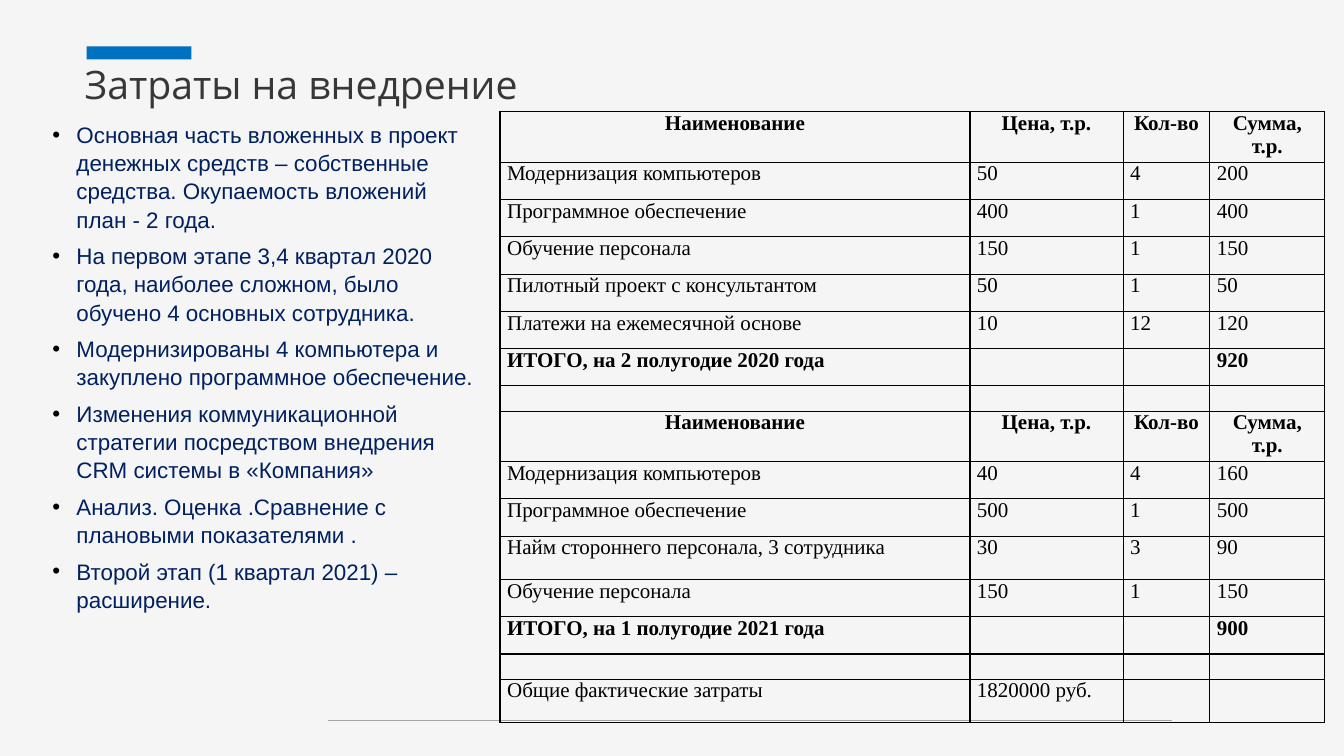
import pptx
import pptx.dml.color
import pptx.enum.shapes
import pptx.enum.text
import pptx.oxml
import pptx.oxml.ns
import pptx.util
from pptx.util import Inches

ALIGN = pptx.enum.text.PP_ALIGN
ANCHOR = pptx.enum.text.MSO_ANCHOR

TITLE_FONT = {"name": "Open Sans", "size": 28, "color": "373737"}
BULLET_FONT = {"name": "Arial", "size": 16, "color": "002060"}
TABLE_FONT = {"name": "Times New Roman", "size": 15, "color": "000000"}

BULLETS = [
    "Основная часть вложенных в проект денежных средств – собственные средства. "
    "Окупаемость вложений план - 2 года.",
    "На первом этапе 3,4 квартал 2020 года, наиболее сложном, было обучено "
    "4 основных сотрудника.",
    "Модернизированы 4 компьютера и закуплено программное обеспечение.",
    "Изменения коммуникационной стратегии посредством внедрения CRM системы в «Компания»",
    "Анализ. Оценка .Сравнение с плановыми показателями .",
    "Второй этап (1 квартал 2021) – расширение.",
]

HEADER = ("Наименование", "Цена, т.р.", "Кол-во", "Сумма, т.р.")
SPACER = ("", "", "", "")
COSTS = [
    HEADER,
    ("Модернизация компьютеров", "50", "4", "200"),
    ("Программное обеспечение", "400", "1", "400"),
    ("Обучение персонала", "150", "1", "150"),
    ("Пилотный проект с консультантом", "50", "1", "50"),
    ("Платежи на ежемесячной основе", "10", "12", "120"),
    ("ИТОГО, на 2 полугодие 2020 года", "", "", "920"),
    SPACER,
    HEADER,
    ("Модернизация компьютеров", "40", "4", "160"),
    ("Программное обеспечение", "500", "1", "500"),
    ("Найм стороннего персонала, 3 сотрудника", "30", "3", "90"),
    ("Обучение персонала", "150", "1", "150"),
    ("ИТОГО, на 1 полугодие 2021 года", "", "", "900"),
    SPACER,
    ("Общие фактические затраты", "1820000 руб.", "", ""),
]
COLUMN_WIDTHS = (4.66, 1.52, 0.86, 1.14)
ROW_HEIGHT, SPACER_HEIGHT, TALL_HEIGHT = 0.37, 0.25, 0.43
TALL_ROWS = {HEADER, COSTS[11], COSTS[-1]}


def rgb(value):
    return pptx.dml.color.RGBColor.from_string(value)


def element(xml):
    """Parse one DrawingML element written with the a: prefix."""
    tag, rest = xml[:-2].partition(" ")[::2] if xml.endswith("/>") and xml.count("<") == 1 else (None, None)
    if tag:
        return pptx.oxml.parse_xml(f"{tag} {pptx.oxml.ns.nsdecls('a')} {rest}/>")
    start, end = xml.split(">", 1)
    return pptx.oxml.parse_xml(f"{start} {pptx.oxml.ns.nsdecls('a')}>{end}")


def set_font(font, formats):
    for name, value in formats.items():
        if name == "color":
            font.color.rgb = rgb(value)
        else:
            setattr(font, name, pptx.util.Pt(value) if name == "size" else value)


def write(para, text, formats):
    span = para.add_run()
    span.text = text
    set_font(span.font, formats)


def add_accent_bar(page):
    bar = page.shapes.add_shape(
        pptx.enum.shapes.MSO_SHAPE.RECTANGLE,
        Inches(0.86), Inches(0.46), Inches(1.04), Inches(0.13))
    bar.shadow.inherit = False
    bar.fill.solid()
    bar.fill.fore_color.rgb = rgb("0070C0")
    bar.line.fill.background()


def add_footer_line(page):
    line = page.shapes.add_connector(
        pptx.enum.shapes.MSO_CONNECTOR.STRAIGHT,
        Inches(3.25), Inches(7.15), Inches(11.62), Inches(7.15))
    line.line.color.rgb = rgb("A5A5A7")
    line.line.width = pptx.util.Pt(0.75)
    line._element.spPr.append(element("<a:effectLst/>"))


def add_text_frame(page, left, top, width, height, anchor):
    box = page.shapes.add_textbox(Inches(left), Inches(top), Inches(width), Inches(height))
    frame = box.text_frame
    frame.word_wrap = True
    frame.vertical_anchor = anchor
    return frame


def add_title(page, text):
    para = add_text_frame(page, 0.74, 0.47, 10, 0.65, ANCHOR.BOTTOM).paragraphs[0]
    para.line_spacing = 0.9
    write(para, text, TITLE_FONT)


def add_bullets(page, items):
    frame = add_text_frame(page, 0.42, 1.14, 4.41, 6.48, ANCHOR.TOP)
    for index, item in enumerate(items):
        para = frame.add_paragraph() if index else frame.paragraphs[0]
        if index:
            para.space_before = pptx.util.Pt(6)
        para.line_spacing = 1.05
        properties = para._p.get_or_add_pPr()
        properties.set("marL", str(Inches(0.24)))
        properties.set("indent", str(-Inches(0.24)))
        properties.append(element('<a:buClr><a:srgbClr val="000000"/></a:buClr>'))
        properties.append(element('<a:buFont typeface="Arial"/>'))
        properties.append(element('<a:buChar char="•"/>'))
        write(para, item, BULLET_FONT)


def add_borders(cell):
    properties = cell._tc.get_or_add_tcPr()
    for index, side in enumerate(("lnL", "lnR", "lnT", "lnB")):
        properties.insert(index, element(
            f'<a:{side} w="{pptx.util.Pt(1)}"><a:solidFill><a:srgbClr val="000000"/>'
            f'</a:solidFill></a:{side}>'))


def fill_cell(cell, text, bold, align):
    cell.margin_left = cell.margin_right = Inches(0.07)
    cell.margin_top = cell.margin_bottom = 0
    cell.fill.background()
    add_borders(cell)
    para = cell.text_frame.paragraphs[0]
    para.alignment = align
    if text:
        write(para, text, {**TABLE_FONT, "bold": bold})
    else:
        para._p.append(element(f'<a:endParaRPr sz="{TABLE_FONT["size"] * 100}"/>'))


def row_height(values):
    if values == SPACER:
        return SPACER_HEIGHT
    return TALL_HEIGHT if values in TALL_ROWS else ROW_HEIGHT


def add_cost_table(page):
    heights = [row_height(values) for values in COSTS]
    table = page.shapes.add_table(
        len(COSTS), len(HEADER), Inches(4.96), Inches(1.11),
        Inches(sum(COLUMN_WIDTHS)), Inches(sum(heights))).table
    table.first_row = table.horz_banding = False
    for column, width in zip(table.columns, COLUMN_WIDTHS):
        column.width = Inches(width)
    for row, height, values in zip(table.rows, heights, COSTS):
        row.height = Inches(height)
        is_header = values == HEADER
        bold = is_header or values[0].startswith("ИТОГО")
        align = ALIGN.CENTER if is_header else ALIGN.JUSTIFY
        for cell, text in zip(row.cells, values):
            fill_cell(cell, text, bold, align)


def main():
    deck = pptx.Presentation()
    deck.slide_width, deck.slide_height = Inches(13.33), Inches(7.5)
    page = deck.slides.add_slide(deck.slide_layouts[6])
    page.background.fill.solid()
    page.background.fill.fore_color.rgb = rgb("F5F5F5")
    add_accent_bar(page)
    add_footer_line(page)
    add_title(page, "Затраты на внедрение")
    add_cost_table(page)
    add_bullets(page, BULLETS)
    deck.save("out.pptx")


if __name__ == "__main__":
    main()
